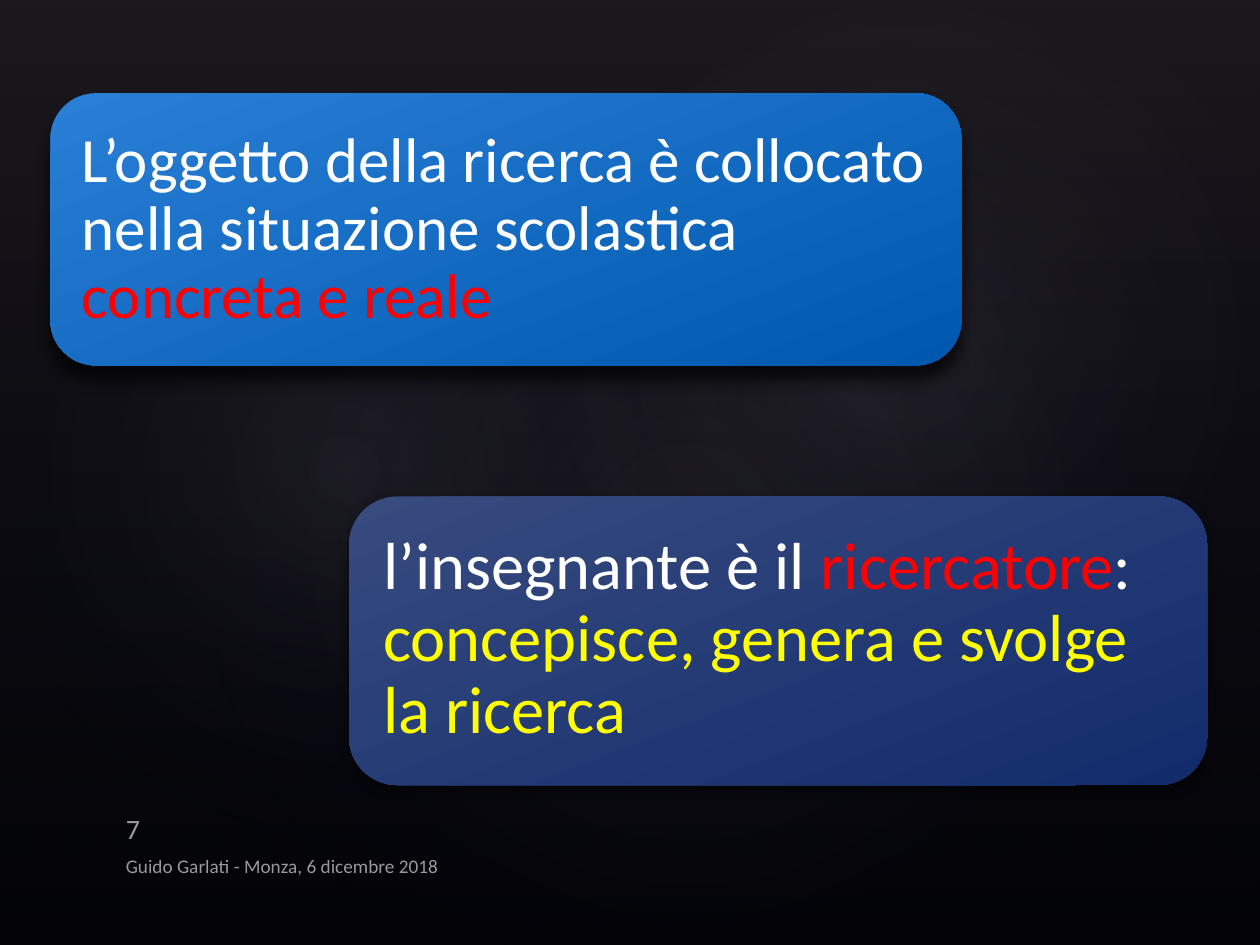
from pptx import Presentation
from pptx.dml.color import RGBColor
from pptx.enum.shapes import MSO_SHAPE
from pptx.enum.text import MSO_ANCHOR
from pptx.oxml import parse_xml
from pptx.oxml.ns import nsdecls, qn
from pptx.util import Inches, Pt

BLACK = RGBColor(0x00, 0x00, 0x00)
WHITE = RGBColor(0xFF, 0xFF, 0xFF)
RED = RGBColor(0xFF, 0x00, 0x00)
YELLOW = RGBColor(0xFF, 0xFF, 0x00)
PLUM = RGBColor(0x50, 0x46, 0x52)
NIGHT = RGBColor(0x24, 0x28, 0x52)
MIST = RGBColor(0xC4, 0xBC, 0xC6)
SKY = RGBColor(0x29, 0x7F, 0xD5)
OCEAN = RGBColor(0x00, 0x57, 0xAE)
SLATE = RGBColor(0x37, 0x4B, 0x7F)
NAVY = RGBColor(0x12, 0x2B, 0x6B)

RADIAL = ('<a:path path="circle"><a:fillToRect l="50000" t="50000" '
          'r="50000" b="50000"/></a:path>')


def colour_xml(colour, opacity):
    return f'<a:srgbClr val="{colour}"><a:alpha val="{opacity * 1000}"/></a:srgbClr>'


def add_gradient_shape(shapes, kind, box, stops, angle=None):
    """Add an unlined shape; stops are (position, colour, opacity) in percent.

    Without an angle the gradient runs outwards from the centre.
    """
    shape = shapes.add_shape(kind, *map(Inches, box))
    shape.shadow.inherit = False
    shape.line.fill.background()
    stop_xml = "".join(
        f'<a:gs pos="{position * 1000}">{colour_xml(colour, opacity)}</a:gs>'
        for position, colour, opacity in stops)
    course = RADIAL if angle is None else f'<a:lin ang="{angle * 60000}" scaled="0"/>'
    gradient = parse_xml(f'<a:gradFill {nsdecls("a")} rotWithShape="1">'
                         f'<a:gsLst>{stop_xml}</a:gsLst>{course}</a:gradFill>')
    shape.element.spPr.find(qn("a:prstGeom")).addnext(gradient)
    return shape


def add_drop_shadow(shape, opacity, blur, distance):
    effects = shape.element.spPr.find(qn("a:effectLst"))
    effects.append(parse_xml(
        f'<a:outerShdw {nsdecls("a")} blurRad="{Pt(blur)}" dist="{Pt(distance)}" '
        f'dir="5400000" algn="ctr" rotWithShape="0">'
        f'{colour_xml(BLACK, opacity)}</a:outerShdw>'))


def add_text(shapes, box, spans, size, insets, anchor, opacity=100, line_spacing=1.0):
    """Add one paragraph; spans are (text, colour), insets left, top, right, bottom."""
    frame = shapes.add_textbox(*map(Inches, box)).text_frame
    left, top, right, bottom = map(Inches, insets)
    settings = {"word_wrap": True, "vertical_anchor": anchor, "margin_left": left,
                "margin_top": top, "margin_right": right, "margin_bottom": bottom}
    for name, value in settings.items():
        setattr(frame, name, value)
    para = frame.paragraphs[0]
    para.line_spacing = line_spacing
    for text, colour in spans:
        span = para.add_run()
        span.text = text
        for name, value in {"name": "Calibri", "size": Pt(size)}.items():
            setattr(span.font, name, value)
        span.font.color.rgb = colour
        if opacity < 100:
            fill = span.font._element.find(qn("a:solidFill"))
            fill[0].append(parse_xml(
                f'<a:alpha {nsdecls("a")} val="{opacity * 1000}"/>'))


def add_backdrop(page, box):
    page.background.fill.solid()
    page.background.fill.fore_color.rgb = BLACK
    add_gradient_shape(page.shapes, MSO_SHAPE.RECTANGLE, box,
                       [(0, PLUM, 36), (100, NIGHT, 10)], angle=90)
    glows = [
        ((1.5, 1.14, 7.92, 6.24), 328.7, 7),
        ((-0.3, 1.28, 6.06, 4.9), 294.3, 8),
        ((3.58, 0.13, 7.09, 5.2), 328.7, 8),
    ]
    for glow_box, rotation, opacity in glows:
        glow = add_gradient_shape(page.shapes, MSO_SHAPE.OVAL, glow_box,
                                  [(0, MIST, opacity), (58, NIGHT, 0)])
        glow.rotation = rotation


def add_card(page, box, text_box, colours, shadow, spans, size, inset):
    group = page.shapes.add_group_shape()
    light, dark = colours
    panel = add_gradient_shape(group.shapes, MSO_SHAPE.ROUNDED_RECTANGLE, box,
                               [(0, light, 100), (100, dark, 100)], angle=69)
    add_drop_shadow(panel, *shadow)
    add_text(group.shapes, text_box, spans, size, [inset] * 4,
             MSO_ANCHOR.MIDDLE, line_spacing=0.9)


def add_footer(page, number_box, credit_box):
    add_text(page.shapes, number_box, [("7", WHITE)], 16,
             (0.1, 0.05, 0.1, 0.01), MSO_ANCHOR.BOTTOM, opacity=60)
    add_text(page.shapes, credit_box,
             [("Guido Garlati - Monza, 6 dicembre 2018", WHITE)], 11,
             (0.1, 0.05, 0.1, 0.05), MSO_ANCHOR.TOP, opacity=60)


def main():
    deck = Presentation()
    deck.slide_width, deck.slide_height = Inches(10), Inches(7.5)
    page = deck.slides.add_slide(deck.slide_layouts[6])
    add_backdrop(page, (0, 0, 10, 7.5))
    add_footer(page, (0.9, 6.39, 2.33, 0.33), (0.9, 6.73, 5, 0.4))
    add_card(page, (0.4, 0.74, 7.23, 2.16), (0.5, 0.85, 7.02, 1.95),
             (SKY, OCEAN), (70, 9, 9),
             [("L’oggetto della ricerca è collocato nella situazione scolastica ", WHITE),
              ("concreta e reale", RED)], size=36, inset=0.15)
    add_card(page, (2.77, 3.94, 6.81, 2.29), (2.88, 4.05, 6.58, 2.06),
             (SLATE, NAVY), (60, 6, 3),
             [("l’insegnante è il ", WHITE), ("ricercatore", RED), (": ", WHITE),
              ("concepisce, genera e svolge la ricerca", YELLOW)], size=38, inset=0.16)
    deck.save("out.pptx")


if __name__ == "__main__":
    main()
